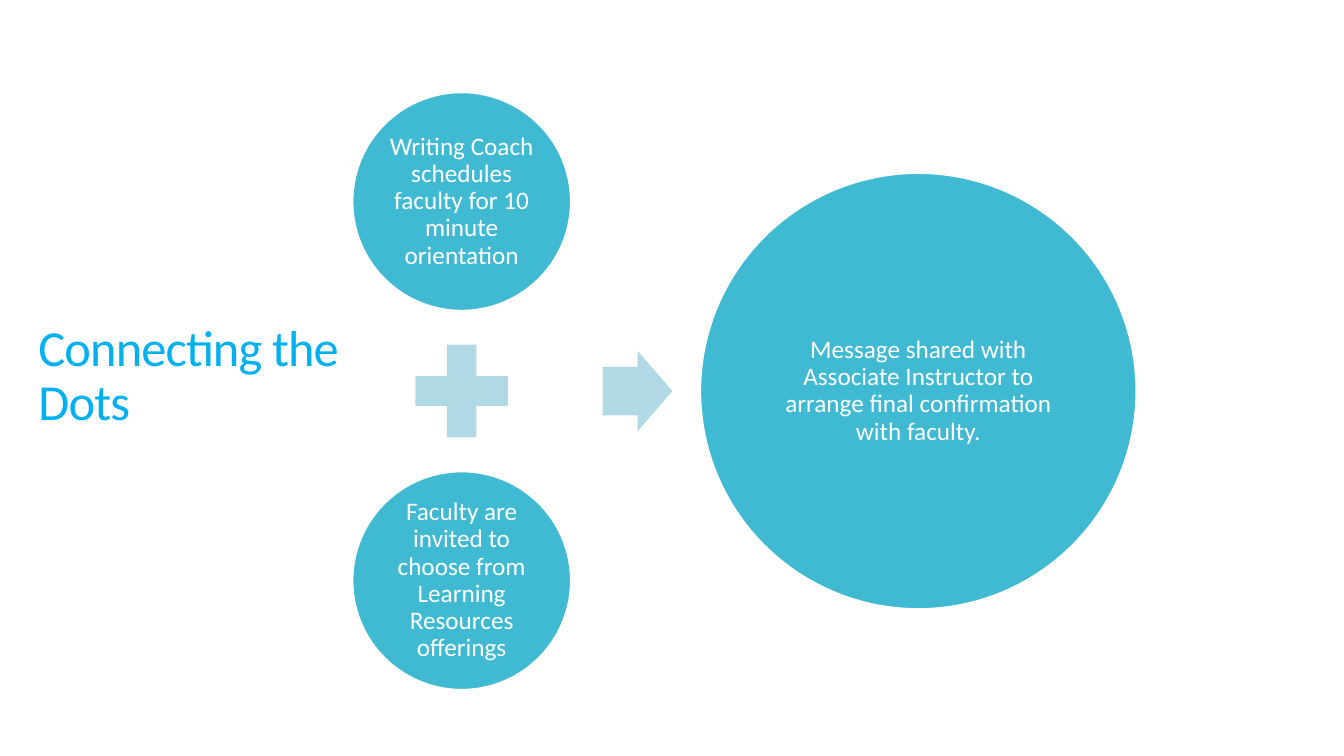
from dataclasses import dataclass

from pptx import Presentation
from pptx.dml.color import RGBColor
from pptx.enum.shapes import MSO_SHAPE as Preset
from pptx.enum.text import MSO_ANCHOR as Anchor, MSO_AUTO_SIZE as AutoSize, PP_ALIGN as Align
from pptx.util import Inches, Pt


@dataclass(frozen=True)
class Theme:
    font: str = "Calibri"
    title_size: float = 36
    body_size: float = 18
    title: str = "00B0F0"
    circle: str = "40BAD2"
    operator: str = "B0D9E5"
    light: str = "FFFFFF"
    outline: float = 0.85


class EquationSlide:
    """Draws a titled equation of circles on a grid of 100 columns by 100 rows."""

    def __init__(self, deck, theme):
        self.theme = theme
        self.column = deck.slide_width / 100
        self.row = deck.slide_height / 100
        self.page = deck.slides.add_slide(deck.slide_layouts[5])

    def frame(self, x, y, width, height):
        return [round(length) for length in (
            x * self.column - width / 2, y * self.row - height / 2, width, height)]

    def set_text(self, shape, text, size, color, align, margin):
        box = shape.text_frame
        box.text = text
        settings = {"word_wrap": True, "auto_size": AutoSize.NONE, "vertical_anchor": Anchor.MIDDLE}
        settings |= {f"margin_{side}": margin for side in ("left", "right", "top", "bottom")}
        para = box.paragraphs[0]
        span = para.runs[0]
        formats = (
            (box, settings),
            (para, {"alignment": align, "line_spacing": 0.9}),
            (span.font, {"name": self.theme.font, "size": Pt(size), "bold": False}),
        )
        for target, values in formats:
            for name, value in values.items():
                setattr(target, name, value)
        span.font.color.rgb = RGBColor.from_string(color)
        return span

    def add_title(self, text, x, y, columns, rows):
        title = self.page.shapes.title
        place = self.frame(x, y, columns * self.column, rows * self.row)
        for name, value in zip(("left", "top", "width", "height"), place):
            setattr(title, name, value)
        span = self.set_text(title, text, self.theme.title_size, self.theme.title,
                             Align.LEFT, Inches(0.1))
        span._r.get_or_add_rPr().set("spc", "-60")

    def add_preset(self, preset, x, y, width, height, color):
        shape = self.page.shapes.add_shape(preset, *self.frame(x, y, width, height))
        shape.shadow.inherit = False
        shape.fill.solid()
        shape.fill.fore_color.rgb = RGBColor.from_string(color)
        shape.line.fill.background()
        return shape

    def add_circle(self, text, x, y, columns):
        diameter = columns * self.column
        circle = self.add_preset(Preset.OVAL, x, y, diameter, diameter, self.theme.circle)
        circle.line.color.rgb = RGBColor.from_string(self.theme.light)
        circle.line.width = Pt(self.theme.outline)
        self.set_text(circle, text, self.theme.body_size, self.theme.light,
                      Align.CENTER, Inches(0.03))

    def add_plus(self, x, y, columns):
        side = columns * self.column
        self.add_preset(Preset.MATH_PLUS, x, y, side, side, self.theme.operator)

    def add_arrow(self, x, y, columns, rows):
        arrow = self.add_preset(Preset.RIGHT_ARROW, x, y, columns * self.column,
                                rows * self.row, self.theme.operator)
        arrow.adjustments[0] = 0.6
        arrow.adjustments[1] = 0.5


def main():
    deck = Presentation()
    deck.slide_width, deck.slide_height = Inches(13.33), Inches(7.5)
    slide = EquationSlide(deck, Theme())
    middle, step, inputs, diameter = 51.73, 25.07, 34.35, 16.2

    slide.add_title("Connecting the Dots", 14.18, 49.93, 24.15, 67.07)
    slide.add_circle("Writing Coach schedules faculty for 10 minute orientation",
                     inputs, middle - step, diameter)
    slide.add_plus(inputs, middle, 9.38)
    slide.add_circle("Faculty are invited to choose from Learning Resources offerings",
                     inputs, middle + step, diameter)
    slide.add_arrow(47.44, middle, 5.18, 10.67)
    slide.add_circle("Message shared with Associate Instructor to arrange final "
                     "confirmation with faculty.", 68.33, middle, 2 * diameter)
    deck.save("out.pptx")


if __name__ == "__main__":
    main()
